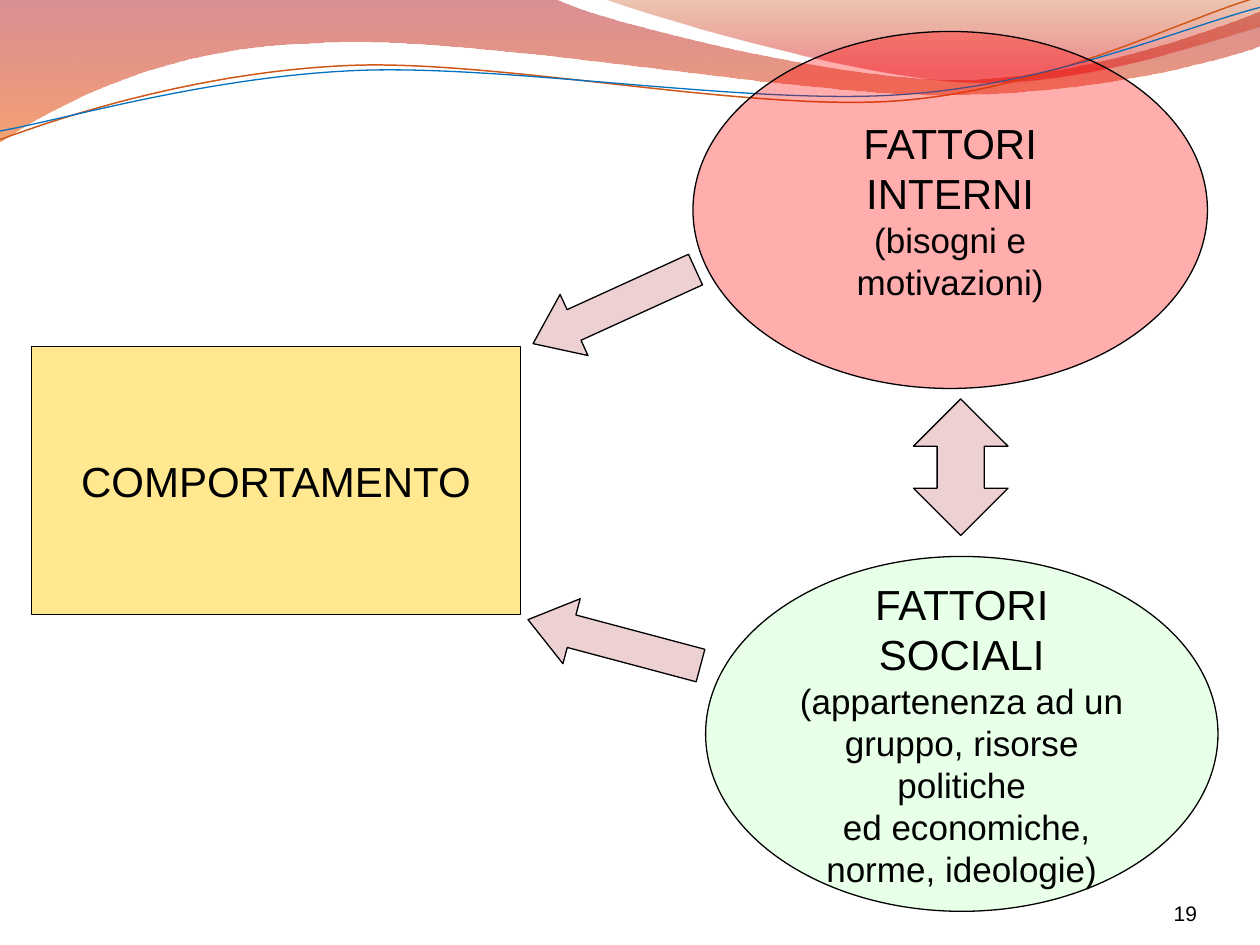
from math import cos, radians, sin

from lxml import etree
from pptx import Presentation
from pptx.dml.color import RGBColor
from pptx.enum.shapes import MSO_SHAPE
from pptx.enum.text import MSO_ANCHOR, PP_ALIGN
from pptx.oxml.ns import qn
from pptx.util import Inches, Pt

RECTANGLE, ELLIPSE = MSO_SHAPE.RECTANGLE, MSO_SHAPE.OVAL
RIGHT_ARROW, DOUBLE_ARROW = MSO_SHAPE.RIGHT_ARROW, MSO_SHAPE.UP_DOWN_ARROW
MIDDLE, BOTTOM = MSO_ANCHOR.MIDDLE, MSO_ANCHOR.BOTTOM
CENTER, RIGHT = PP_ALIGN.CENTER, PP_ALIGN.RIGHT

BLACK = RGBColor(0x00, 0x00, 0x00)
YELLOW = RGBColor(0xFF, 0xCC, 0x00)
GREEN = RGBColor(0xCC, 0xFF, 0xCC)
RED = RGBColor(0xFF, 0x00, 0x00)
ARROW_RED = RGBColor(0xA3, 0x17, 0x1E)
DARK_RED = RGBColor(0xAF, 0x09, 0x11)
ORANGE = RGBColor(0xEE, 0x53, 0x00)
RUST = RGBColor(0xC2, 0x44, 0x00)
CRIMSON = RGBColor(0xDC, 0x00, 0x0B)
LINE_ORANGE = RGBColor(0xCF, 0x58, 0x18)
LINE_BLUE = RGBColor(0x00, 0x70, 0xC0)

FONT = "Arial"
COLUMNS, ROWS = 120, 90
CELL = Inches(10) // COLUMNS
CURVE_TILT = -2.7

WIDE_WAVE = [
    (0, 0), (4.4, -0.01),
    (4.76, 0.17, 6.64, 0.63, 7.58, 0.63), (8.53, 0.63, 9.58, 0.26, 10, 0.09),
    (10.01, 0.36),
    (9.83, 0.44, 8.7, 0.76, 7.46, 0.75), (6.22, 0.75, 3.82, 0.28, 2.57, 0.34),
    (1.29, 0.36, 0.46, 0.83, -0.01, 1.13), (0, 0),
]
CORNER_WAVE = [
    (4.79, -0.01),
    (5.09, 0.11, 6.82, 0.62, 7.69, 0.65), (8.56, 0.69, 9.61, 0.32, 10, 0.21),
    (10, 0), (4.79, -0.01),
]
ORANGE_CURVE = [
    (0, 1.11),
    (0.48, 0.93, 1.58, 0.57, 2.77, 0.52), (3.95, 0.47, 5.93, 0.89, 7.13, 0.8),
    (8.33, 0.71, 9.38, 0.15, 9.98, -0.02),
]
BLUE_CURVE = [
    (0, 1.04),
    (0.47, 0.96, 1.64, 0.61, 2.83, 0.56), (4.03, 0.51, 5.97, 0.84, 7.17, 0.75),
    (8.36, 0.67, 9.41, 0.21, 10, 0.06),
]


def on_grid(box):
    return [round(length * CELL) for length in box]


def set_opacity(shape, percents):
    colors = shape._element.spPr.iter(qn("a:srgbClr"))
    for color, percent in zip(list(colors), percents):
        etree.SubElement(color, qn("a:alpha"), val=str(percent * 1000))


def turn(point, pivot, degrees):
    angle = radians(degrees)
    x, y = point[0] - pivot[0], point[1] - pivot[1]
    return (pivot[0] + x * cos(angle) - y * sin(angle),
            pivot[1] + x * sin(angle) + y * cos(angle))


def bend(shape, segments):
    lines = list(shape._element.spPr.iter(qn("a:lnTo")))
    for segment in segments[1:]:
        count = len(segment) // 2
        group, lines = lines[:count], lines[count:]
        if count == 3:
            curve = etree.Element(qn("a:cubicBezTo"))
            group[0].addprevious(curve)
            for line in group:
                curve.append(line[0])
                line.getparent().remove(line)


def add_outline(slide, box, segments, closed, rotation=0):
    left, top, width = on_grid(box)
    scale = width / 10
    points = [segment[index:index + 2]
              for segment in segments for index in range(0, len(segment), 2)]
    pivot = [(points[0][axis] + points[-1][axis]) / 2 for axis in (0, 1)]
    level = [turn(point, pivot, -rotation) for point in points]
    places = [(round(left + x * scale), round(top + y * scale)) for x, y in level]
    builder = slide.shapes.build_freeform(*places[0])
    builder.add_line_segments(places[1:], close=closed)
    shape = builder.convert_to_shape()
    bend(shape, segments)
    shape.rotation = rotation
    shape.shadow.inherit = False
    return shape


def add_header(slide, box):
    waves = [
        (WIDE_WAVE, [(0, DARK_RED, 45), (1, ORANGE, 55)]),
        (CORNER_WAVE, [(0, RUST, 30), (0.8, CRIMSON, 45)]),
    ]
    for segments, stops in waves:
        wave = add_outline(slide, box, segments, True)
        wave.fill.gradient()
        wave.fill.gradient_angle = 270
        for stop, (position, color, _) in zip(wave.fill.gradient_stops, stops):
            stop.position = position
            stop.color.rgb = color
        set_opacity(wave, [opacity for _, _, opacity in stops])
        wave.line.fill.background()
    for segments, color, weight in [(ORANGE_CURVE, LINE_ORANGE, 0.85),
                                    (BLUE_CURVE, LINE_BLUE, 0.75)]:
        curve = add_outline(slide, box, segments, False, CURVE_TILT)
        curve.fill.background()
        curve.line.color.rgb = color
        curve.line.width = Pt(weight)


def write_text(shape, lines, anchor, alignment, wrap=True):
    text_frame = shape.text_frame
    text_frame.word_wrap = wrap
    text_frame.vertical_anchor = anchor
    text_frame.text = "\n".join(text for text, _ in lines)
    for paragraph, (_, size) in zip(text_frame.paragraphs, lines):
        paragraph.alignment = alignment
        font = paragraph.runs[0].font
        font.name = FONT
        font.size = Pt(size)
        font.color.rgb = BLACK


def add_figure(slide, kind, box, color, opacity):
    shape = slide.shapes.add_shape(kind, *on_grid(box))
    shape.shadow.inherit = False
    shape.fill.solid()
    shape.fill.fore_color.rgb = color
    set_opacity(shape, [opacity])
    shape.line.color.rgb = BLACK
    shape.line.width = Pt(0.75)
    return shape


def add_factor(slide, kind, box, color, opacity, lines, wrap=True):
    factor = add_figure(slide, kind, box, color, opacity)
    write_text(factor, lines, MIDDLE, CENTER, wrap)


def add_arrow(slide, kind, box, proportions, rotation=0):
    arrow = add_figure(slide, kind, box, ARROW_RED, 20)
    for index, proportion in enumerate(proportions):
        arrow.adjustments[index] = proportion
    arrow.rotation = rotation


def add_slide_number(slide, box, number):
    text_box = slide.shapes.add_textbox(*on_grid(box))
    text_frame = text_box.text_frame
    text_frame.margin_left = text_frame.margin_right = 0
    text_frame.margin_top = text_frame.margin_bottom = 0
    write_text(text_box, [(number, 12)], BOTTOM, RIGHT)


def main():
    presentation = Presentation()
    presentation.slide_width, presentation.slide_height = COLUMNS * CELL, ROWS * CELL
    slide = presentation.slides.add_slide(presentation.slide_layouts[6])
    add_header(slide, (0, 0, COLUMNS))
    add_slide_number(slide, (104, 83.4, 10, 4.8), "19")
    add_factor(slide, RECTANGLE, (3, 33, 46.55, 25.5), YELLOW, 44,
               [("COMPORTAMENTO", 24)], wrap=False)
    add_factor(slide, ELLIPSE, (67.2, 53, 48.8, 33.8), GREEN, 44, [
        ("FATTORI SOCIALI", 24),
        ("(appartenenza ad un gruppo, risorse politiche", 20),
        (" ed economiche, norme, ideologie)", 20)])
    add_factor(slide, ELLIPSE, (66, 3, 49, 34), RED, 32, [
        ("FATTORI INTERNI", 24), ("(bisogni e motivazioni)", 20)])
    for top, rotation in [(26, 155.5), (58, 194.9)]:
        add_arrow(slide, RIGHT_ARROW, (50, top, 17, 6.4), (0.5, 0.67), rotation)
    add_arrow(slide, DOUBLE_ARROW, (87, 38, 9, 13), (0.29, 0.5))
    presentation.save("out.pptx")


if __name__ == "__main__":
    main()
